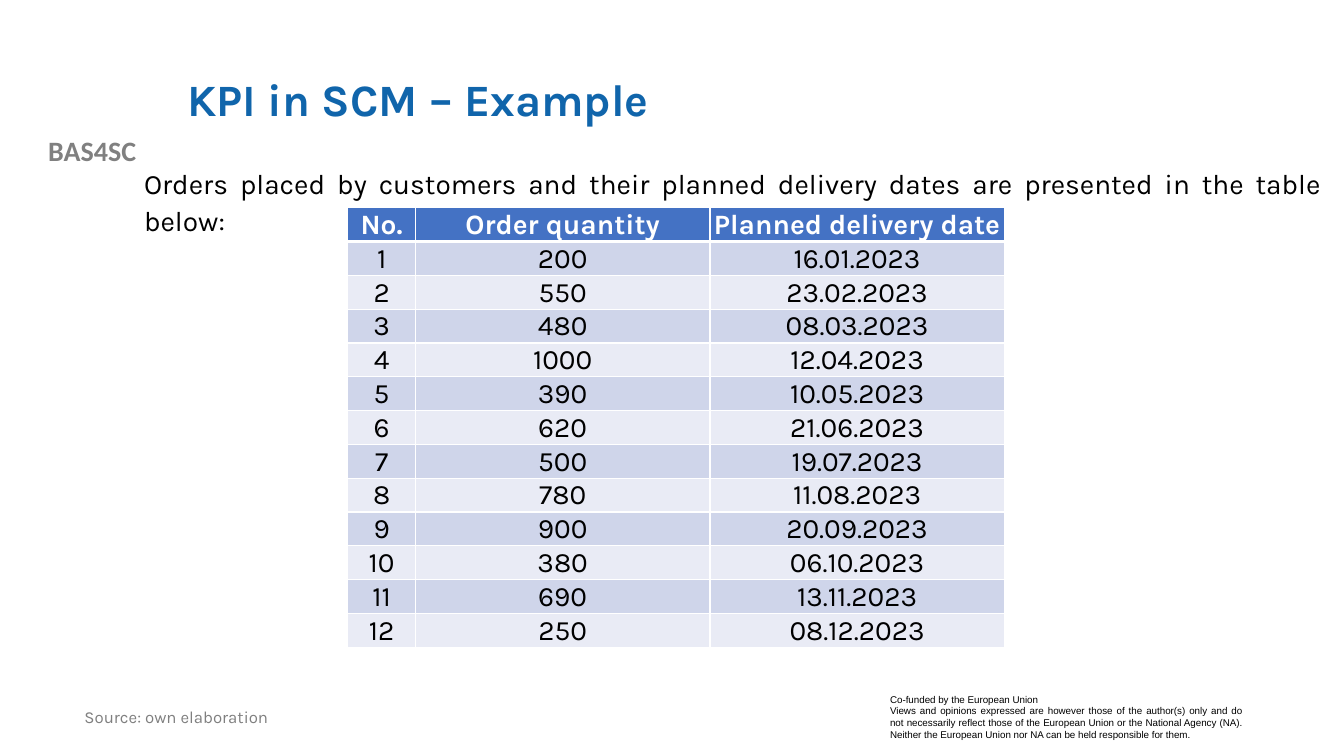
from dataclasses import dataclass, field

from lxml.etree import SubElement
from pptx import Presentation
from pptx.dml.color import RGBColor
from pptx.enum.text import MSO_ANCHOR as Anchor, MSO_AUTO_SIZE as AutoSize, PP_ALIGN as Align
from pptx.oxml.ns import qn
from pptx.shapes.autoshape import Shape
from pptx.slide import Slide
from pptx.table import _Cell as Cell
from pptx.text.text import TextFrame
from pptx.util import Inches, Pt

WHITE = RGBColor(0xFF, 0xFF, 0xFF)
BLACK = RGBColor(0x00, 0x00, 0x00)
TITLE_BLUE = RGBColor(0x10, 0x65, 0xAB)
PROJECT_GRAY = RGBColor(0x80, 0x80, 0x80)
SOURCE_GRAY = RGBColor(0x7F, 0x7F, 0x7F)
HEADER_BLUE = RGBColor(0x44, 0x72, 0xC4)
BANDS = (RGBColor(0xCF, 0xD5, 0xEA), RGBColor(0xE9, 0xEB, 0xF5))

SLIDE_WIDTH, SLIDE_HEIGHT = Inches(13.33), Inches(7.5)


def across(percent: float) -> int:
    return round(SLIDE_WIDTH * percent / 100)


def down(percent: float) -> int:
    return round(SLIDE_HEIGHT * percent / 100)


@dataclass(frozen=True)
class Area:
    """A rectangle in percent of the slide's width and height."""
    left: float
    top: float
    width: float
    height: float

    def lengths(self) -> tuple[int, int, int, int]:
        return across(self.left), down(self.top), across(self.width), down(self.height)


@dataclass(frozen=True)
class Style:
    size: float
    color: RGBColor
    name: str = "Karla"
    bold: bool = False
    paragraph: dict = field(default_factory=dict)


@dataclass(frozen=True)
class TextBlock:
    area: Area
    lines: tuple[str, ...]
    style: Style
    fill: RGBColor | None = None


TITLE = TextBlock(
    Area(13.2, 5.33, 79.97, 16.27), ("KPI in SCM – Example",),
    Style(32, TITLE_BLUE, bold=True, paragraph={"alignment": Align.LEFT, "line_spacing": 0.9}))

BLOCKS = (
    TextBlock(Area(0, 17.07, 13.73, 5.87), ("BAS4SC",),
              Style(20, PROJECT_GRAY, "Calibri", True, {"alignment": Align.CENTER})),
    TextBlock(Area(65.49, 91.07, 27.68, 7.6),
              ("Co-funded by the European Union",
               "Views and opinions expressed are however those of the author(s) only and do not "
               "necessarily reflect those of the European Union or the National Agency (NA). "
               "Neither the European Union nor NA can be held responsible for them."),
              Style(7, BLACK, "Arial", paragraph={"alignment": Align.JUSTIFY}), WHITE),
    TextBlock(Area(9.98, 20.93, 89.12, 9.73),
              ("Orders placed by customers and their planned delivery dates are presented "
               "in the table below:",),
              Style(20, BLACK, paragraph={"alignment": Align.JUSTIFY, "line_spacing": 1.1})),
    TextBlock(Area(5.55, 93.07, 37.58, 6.93), ("Source: own elaboration",),
              Style(12, SOURCE_GRAY, paragraph={"line_spacing": 0.9})),
)

TABLE_AREA = Area(25.88, 27.47, 48.91, 63.73)
COLUMN_WIDTHS = (5.03, 21.91, 21.91)
ROW_HEIGHT = 3.73
HEADINGS = ("No.", "Order quantity", "Planned delivery date")
ORDERS = (
    (200, "16.01.2023"), (550, "23.02.2023"), (480, "08.03.2023"), (1000, "12.04.2023"),
    (390, "10.05.2023"), (620, "21.06.2023"), (500, "19.07.2023"), (780, "11.08.2023"),
    (900, "20.09.2023"), (380, "06.10.2023"), (690, "13.11.2023"), (250, "08.12.2023"),
)
CENTERED = {"alignment": Align.CENTER}
HEADING_STYLE = Style(20, WHITE, bold=True, paragraph=CENTERED)
ORDER_STYLE = Style(20, BLACK, paragraph=CENTERED)
CELL_FORMAT = {
    "vertical_anchor": Anchor.MIDDLE, "margin_left": Inches(0.01),
    "margin_top": Inches(0.01), "margin_right": Inches(0.01), "margin_bottom": 0,
}


def apply_format(target: object, values: dict) -> None:
    for name, value in values.items():
        setattr(target, name, value)


def write(frame: TextFrame, lines: tuple[str, ...], style: Style) -> None:
    for index, line in enumerate(lines):
        para = frame.add_paragraph() if index else frame.paragraphs[0]
        apply_format(para, style.paragraph)
        span = para.add_run()
        span.text = line
        apply_format(span.font, {"name": style.name, "size": Pt(style.size), "bold": style.bold})
        span.font.color.rgb = style.color


def fill_box(box: Shape, block: TextBlock, anchor: Anchor) -> None:
    apply_format(box, dict(zip(("left", "top", "width", "height"), block.area.lengths())))
    apply_format(box.text_frame, {
        "word_wrap": True, "auto_size": AutoSize.NONE, "vertical_anchor": anchor})
    if block.fill is not None:
        box.fill.solid()
        box.fill.fore_color.rgb = block.fill
    write(box.text_frame, block.lines, block.style)


def add_borders(cell: Cell, bottom_points: int) -> None:
    """Draw white borders, 1 pt except for the bottom one."""
    properties = cell._tc.get_or_add_tcPr()
    for side, points in (("L", 1), ("R", 1), ("T", 1), ("B", bottom_points)):
        line = SubElement(properties, qn(f"a:ln{side}"), w=str(Pt(points)))
        SubElement(SubElement(line, qn("a:solidFill")), qn("a:srgbClr"), val=str(WHITE))


def add_orders_table(page: Slide) -> None:
    rows = [HEADINGS] + [(str(number), str(quantity), date)
                         for number, (quantity, date) in enumerate(ORDERS, 1)]
    frame = page.shapes.add_table(len(rows), len(HEADINGS), *TABLE_AREA.lengths())
    table = frame.table
    for column, width in zip(table.columns, COLUMN_WIDTHS):
        column.width = across(width)
    for row_index, (row, texts) in enumerate(zip(table.rows, rows)):
        row.height = down(ROW_HEIGHT)
        is_header = row_index == 0
        for cell, text in zip(row.cells, texts):
            apply_format(cell, CELL_FORMAT)
            add_borders(cell, 3 if is_header else 1)
            cell.fill.solid()
            cell.fill.fore_color.rgb = HEADER_BLUE if is_header else BANDS[(row_index - 1) % 2]
            write(cell.text_frame, (text,), HEADING_STYLE if is_header else ORDER_STYLE)


def main() -> None:
    deck = Presentation()
    apply_format(deck, {"slide_width": SLIDE_WIDTH, "slide_height": SLIDE_HEIGHT})
    page = deck.slides.add_slide(deck.slide_layouts.get_by_name("Title Only"))
    fill_box(page.shapes.title, TITLE, Anchor.MIDDLE)
    for block in BLOCKS:
        fill_box(page.shapes.add_textbox(*block.area.lengths()), block, Anchor.TOP)
    add_orders_table(page)
    deck.save("out.pptx")


if __name__ == "__main__":
    main()
